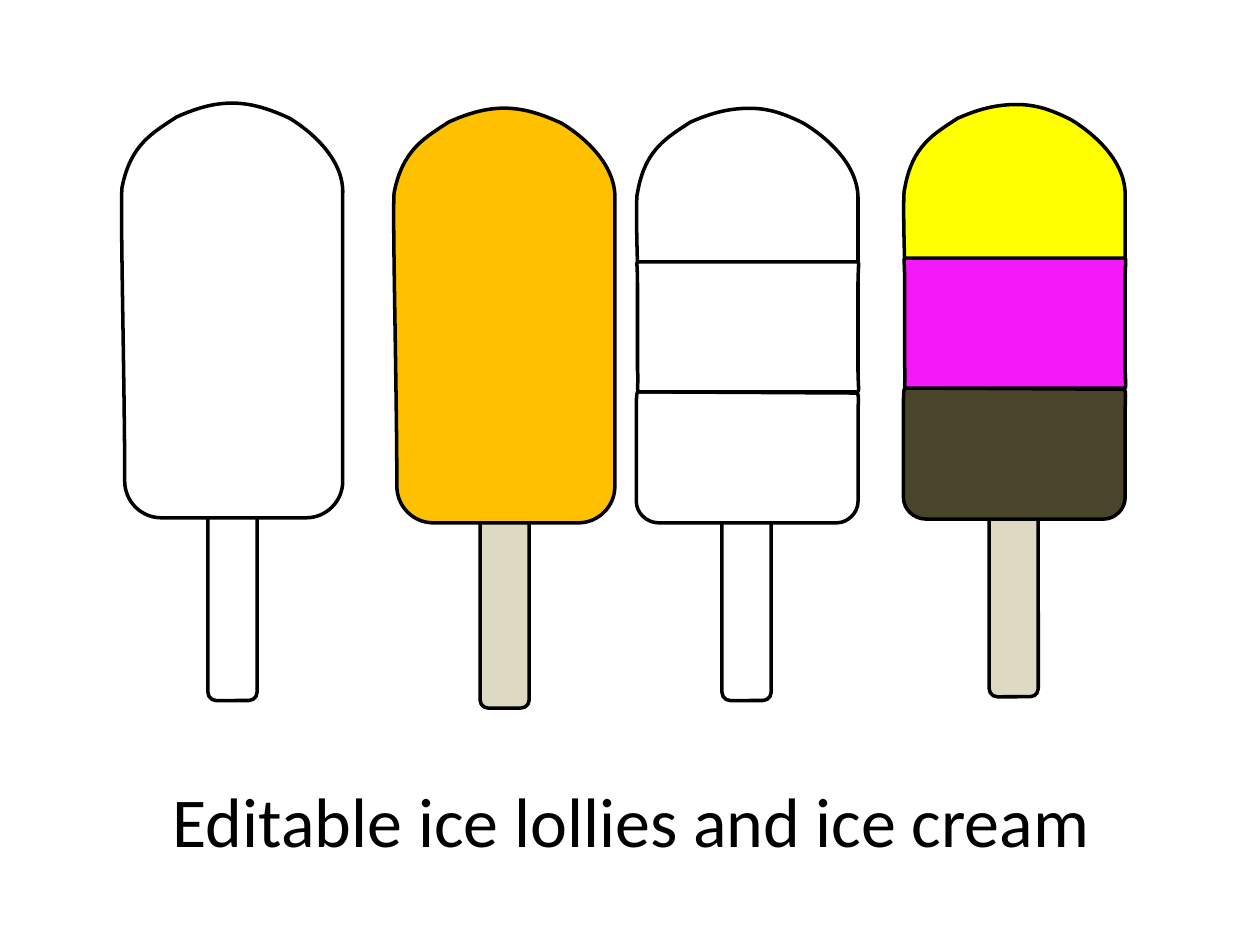
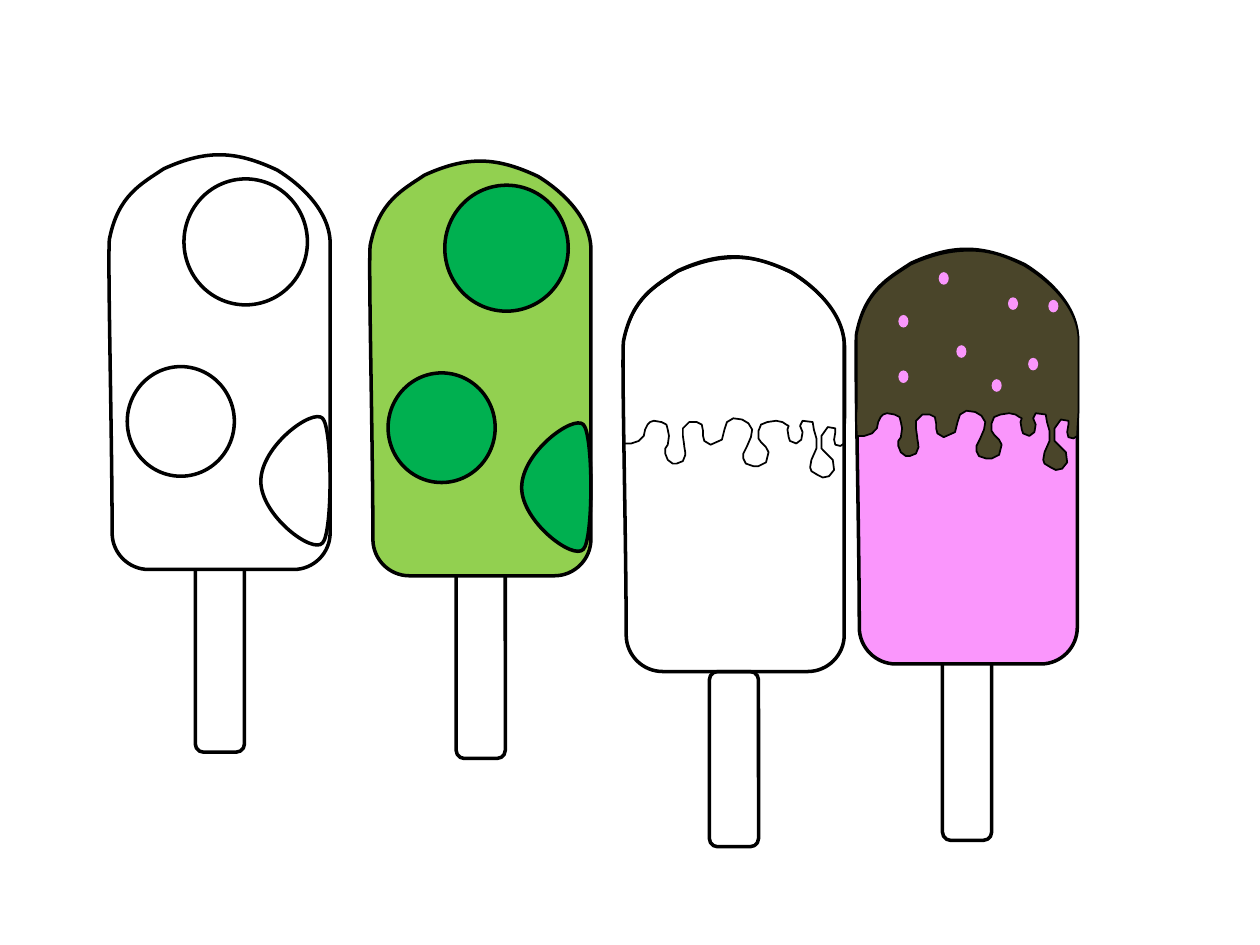
from lxml import etree
from pptx import Presentation
from pptx.dml.color import RGBColor
from pptx.enum.shapes import MSO_SHAPE
from pptx.enum.text import MSO_ANCHOR, PP_ALIGN
from pptx.oxml.ns import qn
from pptx.util import Inches, Pt

ROUNDED = MSO_SHAPE.ROUNDED_RECTANGLE
OVAL = MSO_SHAPE.OVAL
MIDDLE = MSO_ANCHOR.MIDDLE
CENTER = PP_ALIGN.CENTER

BLACK = RGBColor(0x00, 0x00, 0x00)
WHITE = RGBColor(0xFF, 0xFF, 0xFF)
WOOD = RGBColor(0xDD, 0xD9, 0xC3)
ORANGE = RGBColor(0xFF, 0xC0, 0x00)
YELLOW = RGBColor(0xFF, 0xFF, 0x00)
MAGENTA = RGBColor(0xF3, 0x19, 0xF8)
CHOCOLATE = RGBColor(0x4A, 0x45, 0x2A)
PINK = RGBColor(0xFA, 0x96, 0xFC)
LIME = RGBColor(0x92, 0xD0, 0x50)
GREEN = RGBColor(0x00, 0xB0, 0x50)

FONT = "Calibri"
OUTLINE = 2
CURVE_STEPS = 24
STICK_LEFT, STICK_WIDTH, STICK_HEIGHT = 0.68, 0.39, 1.61

BODY = [
    (0, 0.66),
    (0.07, 0.32, 0.25, 0.23, 0.43, 0.11),
    (0.78, -0.05, 1.01, -0.03, 1.33, 0.12),
    (1.51, 0.23, 1.76, 0.45, 1.75, 0.72),
    (1.75, 3),
    (1.75, 3.16, 1.62, 3.29, 1.46, 3.29),
    (0.31, 3.29),
    (0.15, 3.29, 0.02, 3.16, 0.02, 3),
    (0.02, 2.22, -0.02, 0.7, 0, 0.66),
]
DOME_RIGHT = [
    (0.9, 0),
    (1.05, 0, 1.17, 0.04, 1.33, 0.12),
    (1.51, 0.23, 1.77, 0.45, 1.76, 0.73),
]
DOME_LEFT = [
    (0.07, 0.32, 0.25, 0.23, 0.43, 0.11),
    (0.61, 0.03, 0.75, 0, 0.9, 0),
]
TOP_STRIPE = DOME_RIGHT + [
    (1.76, 1.24),
    (0.01, 1.24),
    (0, 0.91, 0, 0.68, 0.01, 0.67),
] + DOME_LEFT
MIDDLE_STRIPE = [
    (0.01, 1.39),
    (0.01, 1.26, 0, 1.22, 0.01, 1.22),
    (1.76, 1.22),
    (1.77, 1.21, 1.76, 1.3, 1.76, 1.39),
    (1.76, 2.08),
    (1.76, 2.17, 1.77, 2.25, 1.76, 2.25),
    (0.02, 2.25),
    (0, 2.25, 0.02, 2.17, 0.01, 2.08),
    (0.01, 1.39),
]
BOTTOM_STRIPE = [
    (0, 2.43),
    (0, 2.34, 0, 2.26, 0.01, 2.25),
    (1.75, 2.26),
    (1.77, 2.26, 1.76, 2.34, 1.76, 2.43),
    (1.76, 3.12),
    (1.76, 3.21, 1.68, 3.29, 1.59, 3.29),
    (0.18, 3.29),
    (0.08, 3.29, 0, 3.21, 0, 3.12),
    (0, 2.43),
]
BITE = [
    (1.2, 2.6),
    (1.2, 2.32, 1.61, 2.02, 1.69, 2.1),
    (1.77, 2.18, 1.77, 3.01, 1.69, 3.09),
    (1.61, 3.18, 1.2, 2.87, 1.2, 2.6),
]
DRIPPING_SAUCE = DOME_RIGHT + [
    (1.76, 0.9, 1.76, 1.07, 1.76, 1.24), (1.76, 1.24),
    (1.76, 1.32, 1.75, 1.39, 1.75, 1.47), (1.72, 1.49), (1.68, 1.48), (1.67, 1.44),
    (1.68, 1.38), (1.68, 1.35), (1.62, 1.34), (1.57, 1.41), (1.57, 1.51),
    (1.61, 1.55), (1.66, 1.6), (1.67, 1.68), (1.63, 1.73), (1.58, 1.74),
    (1.54, 1.72), (1.49, 1.69), (1.48, 1.66), (1.49, 1.6), (1.53, 1.51),
    (1.53, 1.43), (1.51, 1.36), (1.5, 1.3), (1.42, 1.29), (1.4, 1.33),
    (1.42, 1.38), (1.41, 1.44), (1.37, 1.47), (1.32, 1.45), (1.31, 1.42),
    (1.3, 1.36), (1.31, 1.33), (1.29, 1.32), (1.26, 1.3), (1.21, 1.29),
    (1.14, 1.3), (1.09, 1.32), (1.07, 1.37), (1.07, 1.43), (1.09, 1.46),
    (1.13, 1.5), (1.15, 1.54), (1.13, 1.62), (1.07, 1.65), (1.03, 1.65),
    (0.97, 1.63), (0.95, 1.59), (0.95, 1.55), (0.98, 1.49), (1.01, 1.42),
    (1.02, 1.36), (0.99, 1.31), (0.94, 1.28), (0.87, 1.27), (0.82, 1.3),
    (0.8, 1.36), (0.78, 1.44), (0.69, 1.48), (0.64, 1.45), (0.63, 1.41),
    (0.63, 1.37), (0.62, 1.32), (0.58, 1.3), (0.52, 1.3), (0.47, 1.35),
    (0.47, 1.41), (0.48, 1.48), (0.48, 1.5, 0.49, 1.53, 0.49, 1.56),
    (0.47, 1.61), (0.42, 1.63),
    (0.39, 1.63), (0.35, 1.6), (0.33, 1.55), (0.33, 1.51), (0.35, 1.48),
    (0.36, 1.41), (0.35, 1.36), (0.34, 1.32), (0.3, 1.3), (0.24, 1.29),
    (0.21, 1.3), (0.19, 1.32), (0.17, 1.36), (0.16, 1.41), (0.12, 1.45),
    (0.06, 1.47), (0, 1.47),
    (0, 1.4, -0.01, 1.33, 0, 1.25), (0, 0.67),
] + DOME_LEFT
SPRINKLES = [
    (0.65, 0.18), (0.33, 0.52), (0.79, 0.76), (1.2, 0.38),
    (1.36, 0.86), (0.33, 0.96), (1.07, 1.03), (1.52, 0.4),
]


def paint(shape, fill, line_width=OUTLINE):
    shape.shadow.inherit = False
    if fill is None:
        shape.fill.background()
    else:
        shape.fill.solid()
        shape.fill.fore_color.rgb = fill
    if line_width:
        shape.line.color.rgb = BLACK
        shape.line.width = Pt(line_width)
    else:
        shape.line.fill.background()


def bounds(segments):
    points = [segments[0]]
    for segment in segments[1:]:
        if len(segment) == 2:
            points.append(segment)
            continue
        corners = (points[-1], segment[:2], segment[2:4], segment[4:])
        for step in range(1, CURVE_STEPS + 1):
            t = step / CURVE_STEPS
            weights = ((1 - t) ** 3, 3 * t * (1 - t) ** 2, 3 * t * t * (1 - t), t ** 3)
            points.append(tuple(sum(weight * corner[axis] for weight, corner
                                    in zip(weights, corners)) for axis in (0, 1)))
    xs, ys = zip(*points)
    return min(xs), min(ys), max(xs) - min(xs), max(ys) - min(ys)


def add_outline(slide, left, top, segments, fill, line_width=OUTLINE):
    x0, y0, width, height = bounds(segments)
    ends = [(Inches(x), Inches(y)) for *_, x, y in segments]
    builder = slide.shapes.build_freeform(*ends[0])
    builder.add_line_segments(ends[1:], close=True)
    shape = builder.convert_to_shape()
    shape.left, shape.top = Inches(left + x0), Inches(top + y0)
    shape.width, shape.height = Inches(width), Inches(height)

    outline = next(shape.element.iter(qn("a:path")))
    outline.set("w", str(shape.width))
    outline.set("h", str(shape.height))
    for step in list(outline):
        outline.remove(step)
    for index, segment in enumerate(segments):
        tag = "a:moveTo" if index == 0 else "a:lnTo" if len(segment) == 2 else "a:cubicBezTo"
        step = etree.SubElement(outline, qn(tag))
        for x, y in zip(segment[::2], segment[1::2]):
            etree.SubElement(step, qn("a:pt"), x=str(Inches(x - x0)), y=str(Inches(y - y0)))
    etree.SubElement(outline, qn("a:close"))
    paint(shape, fill, line_width)


def add_preset(slide, kind, left, top, width, height, fill, line_width=OUTLINE):
    shape = slide.shapes.add_shape(
        kind, Inches(left), Inches(top), Inches(width), Inches(height))
    paint(shape, fill, line_width)


def add_stick(slide, left, top, fill, height=STICK_HEIGHT):
    add_preset(slide, ROUNDED, left + STICK_LEFT, top, STICK_WIDTH, height, fill)


def plain_lolly(slide, left, top, flavour, stick, stick_top=3.13):
    add_stick(slide, left, top + stick_top, stick)
    add_outline(slide, left, top, BODY, flavour)


def striped_lolly(slide, left, top, flavours, stick):
    add_stick(slide, left, top + 3.09, stick)
    stripes = (TOP_STRIPE, BOTTOM_STRIPE, MIDDLE_STRIPE)
    for stripe, flavour in zip(stripes, flavours):
        add_outline(slide, left, top, stripe, flavour)


def spotted_lolly(slide, left, top, flavour, spots):
    plain_lolly(slide, left, top, flavour, WHITE)
    add_preset(slide, OVAL, left + 0.59, top + 0.19, 0.98, 1, spots)
    add_preset(slide, OVAL, left + 0.14, top + 1.68, 0.85, 0.87, spots)
    add_outline(slide, left, top - 0.01, BITE, spots)


def dipped_lolly(slide, left, top, flavour, sauce, sprinkles=None):
    if flavour is None:
        add_stick(slide, left, top + 3.29, WHITE, 1.39)
        add_outline(slide, left, top, BODY, None)
    else:
        plain_lolly(slide, left, top, flavour, WHITE, 3.08)
    add_outline(slide, left, top + 0.01, DRIPPING_SAUCE, sauce, 1)
    if sprinkles is not None:
        for x, y in SPRINKLES:
            add_preset(slide, OVAL, left + x, top + y, 0.08, 0.1, sprinkles, 0)


def add_title(slide, left, top, width, height, text):
    title = slide.shapes.add_textbox(
        Inches(left), Inches(top), Inches(width), Inches(height))
    frame = title.text_frame
    frame.word_wrap = True
    frame.vertical_anchor = MIDDLE
    paragraph = frame.paragraphs[0]
    paragraph.alignment = CENTER
    run = paragraph.add_run()
    run.text = text
    run.font.name = FONT
    run.font.size = Pt(40)
    run.font.color.rgb = BLACK


def plain_and_striped_slide(slide):
    plain_lolly(slide, 0.97, 0.82, WHITE, WHITE)
    plain_lolly(slide, 3.13, 0.86, ORANGE, WOOD, 3.15)
    striped_lolly(slide, 5.05, 0.86, (WHITE, WHITE, WHITE), WHITE)
    striped_lolly(slide, 7.17, 0.83, (YELLOW, CHOCOLATE, MAGENTA), WOOD)
    add_title(slide, 0.51, 5.88, 9, 1.25, "Editable ice lollies and ice cream")


def spotted_and_dipped_slide(slide):
    spotted_lolly(slide, 0.87, 1.23, WHITE, WHITE)
    spotted_lolly(slide, 2.94, 1.28, LIME, GREEN)
    dipped_lolly(slide, 6.8, 1.98, PINK, CHOCOLATE, PINK)
    dipped_lolly(slide, 4.95, 2.04, None, None)


def main():
    deck = Presentation()
    deck.slide_width, deck.slide_height = Inches(10), Inches(7.5)
    blank = deck.slide_layouts[6]
    for draw in (plain_and_striped_slide, spotted_and_dipped_slide):
        draw(deck.slides.add_slide(blank))
    deck.save("out.pptx")


if __name__ == "__main__":
    main()
